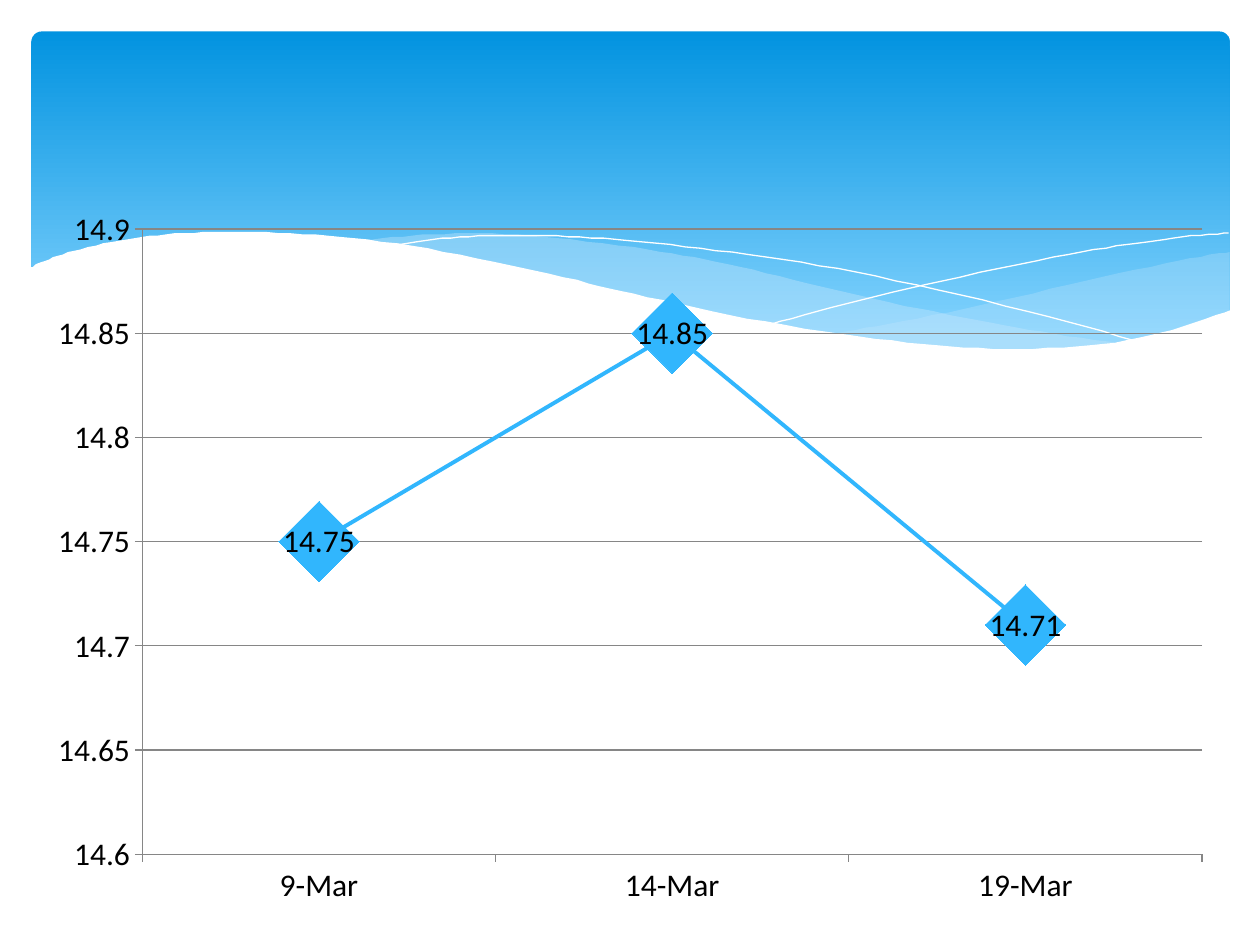
from dataclasses import dataclass
from typing import Optional

from lxml.etree import SubElement
from pptx import Presentation
from pptx.chart.data import CategoryChartData
from pptx.dml.color import RGBColor
from pptx.enum.chart import XL_CHART_TYPE, XL_LABEL_POSITION, XL_MARKER_STYLE, XL_TICK_MARK
from pptx.enum.shapes import MSO_SHAPE
from pptx.oxml import parse_xml
from pptx.oxml.ns import nsdecls, qn
from pptx.util import Inches, Pt

SLIDE_WIDTH, SLIDE_HEIGHT = Inches(10), Inches(7.5)
GRID_COLUMNS = 1000
CELL = SLIDE_WIDTH / GRID_COLUMNS
CURVE_STEPS = 6

WHITE = RGBColor(0xFF, 0xFF, 0xFF)
BLACK = RGBColor(0x00, 0x00, 0x00)
DEEP_BLUE = RGBColor(0x02, 0x93, 0xE0)
SKY_BLUE = RGBColor(0x83, 0xD3, 0xFE)
PALE_BLUE = RGBColor(0xC6, 0xE7, 0xFC)
SERIES_BLUE = RGBColor(0x31, 0xB6, 0xFD)
GRID_GRAY = RGBColor(0x86, 0x86, 0x86)

Point = tuple[float, float]


@dataclass(frozen=True)
class Wave:
    curves: list[list[Point]]
    fill: Optional[RGBColor] = None
    opacity: int = 100


WAVES = [
    Wave([[(976, 200), (935, 207), (861, 223), (779, 242), (706, 257), (661, 265)],
          [(661, 265), (705, 271), (757, 276), (803, 278), (854, 276), (897, 270),
           (935, 262), (976, 247)]], PALE_BLUE, 29),
    Wave([[(893, 273), (837, 265), (775, 254), (706, 240), (629, 222), (569, 208),
           (514, 198), (442, 189), (380, 185), (328, 187), (286, 191)],
          [(286, 191), (342, 199), (404, 211), (449, 222), (530, 240), (601, 255),
           (665, 266), (722, 274), (773, 277), (818, 278), (857, 277), (893, 273)]],
         PALE_BLUE, 40),
    Wave([[(309, 195), (344, 190), (387, 187), (433, 187), (489, 190), (556, 197),
           (636, 208), (727, 226), (831, 251), (907, 272)]]),
    Wave([[(613, 257), (672, 241), (748, 223), (836, 204), (895, 194), (938, 188),
           (975, 185)]]),
    Wave([[(977, 246), (930, 262), (875, 273), (809, 277), (744, 274), (668, 265),
           (579, 250), (503, 233), (447, 220), (365, 202), (292, 190), (230, 185),
           (177, 184), (132, 186), (95, 191), (59, 199), (36, 207), (23, 213)],
          [(23, 329)], [(977, 329)]], WHITE),
]


def cells(count: float) -> int:
    return round(count * CELL)


def smooth_curve(points: list[Point]) -> list[Point]:
    padded = [points[0], *points, points[-1]]
    result = [points[0]]
    for before, start, end, after in zip(padded, padded[1:], padded[2:], padded[3:]):
        for step in range(1, CURVE_STEPS + 1):
            t = step / CURVE_STEPS
            result.append(tuple(
                b + ((c - a) * t + (2 * a - 5 * b + 4 * c - d) * t ** 2
                     + (3 * b - a - 3 * c + d) * t ** 3) / 2
                for a, b, c, d in zip(before, start, end, after)))
    return result


def add_banner(slide) -> None:
    shape = slide.shapes.add_shape(
        MSO_SHAPE.ROUNDED_RECTANGLE, cells(25), cells(25), cells(951), cells(270))
    shape.adjustments[0] = 0.03
    shape.shadow.inherit = False
    shape.line.fill.background()
    shape.fill.gradient()
    shape.fill.gradient_angle = 270
    stops = zip(shape.fill.gradient_stops, (0, 0.9), (DEEP_BLUE, SKY_BLUE))
    for stop, position, color in stops:
        stop.position = position
        stop.color.rgb = color


def add_wave(slide, wave: Wave) -> None:
    points = [point for curve in wave.curves for point in smooth_curve(curve)]
    builder = slide.shapes.build_freeform(*points[0], scale=CELL)
    builder.add_line_segments(points[1:], close=wave.fill is not None)
    shape = builder.convert_to_shape()
    shape.shadow.inherit = False
    if wave.fill is None:
        shape.fill.background()
        shape.line.color.rgb = WHITE
        shape.line.width = Pt(0)
        return
    shape.line.fill.background()
    shape.fill.solid()
    shape.fill.fore_color.rgb = wave.fill
    if wave.opacity < 100:
        color = shape.fill._xPr.find(qn("a:solidFill"))[0]
        SubElement(color, qn("a:alpha"), val=str(wave.opacity * 1000))


def format_line(line, color: RGBColor, width: float) -> None:
    line.color.rgb = color
    line.width = Pt(width)


def set_plot_layout(chart, **shares: float) -> None:
    plot_area = chart._chartSpace.chart.plotArea
    for layout in plot_area.findall(qn("c:layout")):
        plot_area.remove(layout)
    values = "".join(f'<c:{name} val="{share}"/>' for name, share in shares.items())
    plot_area.insert(0, parse_xml(
        f'<c:layout {nsdecls("c")}><c:manualLayout><c:layoutTarget val="inner"/>'
        f'<c:xMode val="edge"/><c:yMode val="edge"/>{values}'
        "</c:manualLayout></c:layout>"))


def add_line_chart(slide) -> None:
    data = CategoryChartData(number_format="General")
    data.categories = ["9-Mar", "14-Mar", "19-Mar"]
    data.add_series("Series 1", (14.75, 14.85, 14.71))
    chart = slide.shapes.add_chart(
        XL_CHART_TYPE.LINE_MARKERS_STACKED,
        cells(28), cells(153), cells(945), cells(577), data).chart
    chart.has_legend = False
    chart.has_title = False
    chart.font.name = "Calibri"
    chart.font.size = Pt(18)
    chart.font.color.rgb = BLACK
    set_plot_layout(chart, x=0.09, y=0.05, w=0.89, h=0.86)

    for axis in (chart.category_axis, chart.value_axis):
        axis.major_tick_mark = XL_TICK_MARK.OUTSIDE
        axis.minor_tick_mark = XL_TICK_MARK.NONE
        format_line(axis.format.line, GRID_GRAY, 0.75)
    value_axis = chart.value_axis
    value_axis.minimum_scale = 14.6
    value_axis.maximum_scale = 14.9
    value_axis.major_unit = 0.05
    value_axis.has_major_gridlines = True
    format_line(value_axis.major_gridlines.format.line, GRID_GRAY, 0.75)

    plot = chart.plots[0]
    plot.vary_by_categories = False
    series = plot.series[0]
    series.smooth = False
    format_line(series.format.line, SERIES_BLUE, 2.25)
    series.marker.style = XL_MARKER_STYLE.DIAMOND
    series.marker.size = 46
    series.marker.format.fill.solid()
    series.marker.format.fill.fore_color.rgb = SERIES_BLUE
    series.marker.format.line.fill.background()
    series.data_labels.show_value = True
    series.data_labels.position = XL_LABEL_POSITION.CENTER


def main() -> None:
    presentation = Presentation()
    presentation.slide_width = SLIDE_WIDTH
    presentation.slide_height = SLIDE_HEIGHT
    slide = presentation.slides.add_slide(presentation.slide_layouts[6])
    add_banner(slide)
    for wave in WAVES:
        add_wave(slide, wave)
    add_line_chart(slide)
    presentation.save("out.pptx")


if __name__ == "__main__":
    main()
